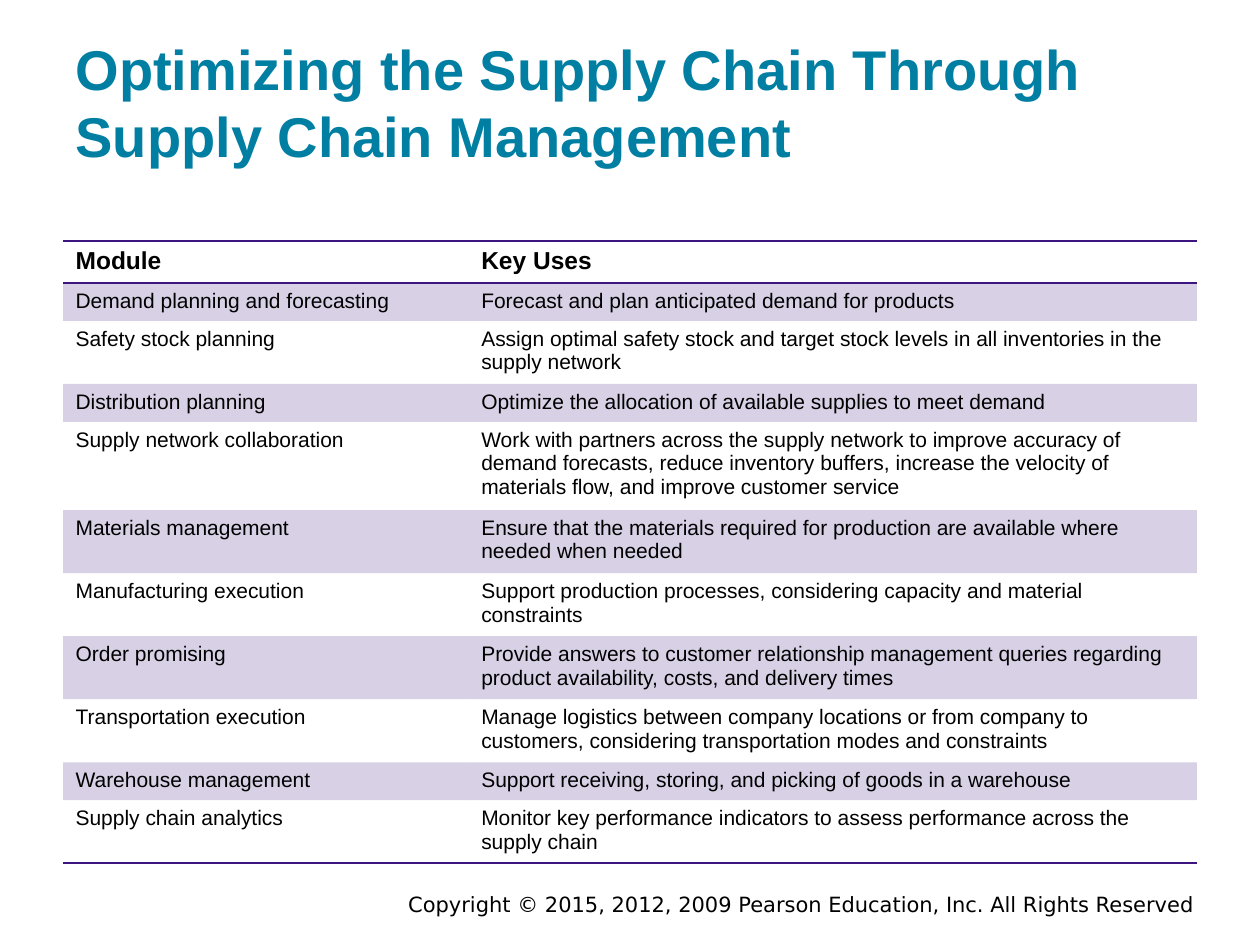
"""Build a slide that lists supply chain management modules and their key uses."""
from typing import NamedTuple

import pptx
import pptx.dml.color
import pptx.enum.text
import pptx.oxml
import pptx.oxml.ns
import pptx.util

TEAL = pptx.dml.color.RGBColor(0x00, 0x7F, 0xA3)
PURPLE = pptx.dml.color.RGBColor(0x3C, 0x15, 0x81)
BLACK = pptx.dml.color.RGBColor(0, 0, 0)
NAMESPACE = pptx.oxml.ns.nsdecls("a")
PLAIN_TABLE_STYLE = "{2D5ABB26-0587-4C30-8999-92F81FD0307C}"
SLIDE_WIDTH, SLIDE_HEIGHT = 10, 7.5
MARGIN = 0.05
COLUMN_SHARES = (0.322, 0.578)
HEADER_HEIGHT, LINE_HEIGHT, ROW_PADDING = 0.32, 0.19, 0.09


class Module(NamedTuple):
    """A table row, with the number of lines its text fills."""

    name: str
    key_uses: str
    lines: int


MODULES = (
    Module("Demand planning and forecasting", "Forecast and plan anticipated demand for products", 1),
    Module("Safety stock planning", "Assign optimal safety stock and target stock levels in all "
           "inventories in the supply network", 2),
    Module("Distribution planning", "Optimize the allocation of available supplies to meet demand", 1),
    Module("Supply network collaboration", "Work with partners across the supply network to improve "
           "accuracy of demand forecasts, reduce inventory buffers, increase the velocity of "
           "materials flow, and improve customer service", 3),
    Module("Materials management", "Ensure that the materials required for production are available "
           "where needed when needed", 2),
    Module("Manufacturing execution", "Support production processes, considering capacity and "
           "material constraints", 2),
    Module("Order promising", "Provide answers to customer relationship management queries regarding "
           "product availability, costs, and delivery times", 2),
    Module("Transportation execution", "Manage logistics between company locations or from company to "
           "customers, considering transportation modes and constraints", 2),
    Module("Warehouse management", "Support receiving, storing, and picking of goods in a warehouse", 1),
    Module("Supply chain analytics", "Monitor key performance indicators to assess performance across "
           "the supply chain", 2),
)


def across(share: float) -> int:
    """Turn a share of the slide width into a length."""
    return pptx.util.Inches(SLIDE_WIDTH * share)


def down(share: float) -> int:
    """Turn a share of the slide height into a length."""
    return pptx.util.Inches(SLIDE_HEIGHT * share)


def place(shape, left: float, top: float, width: float, height: float) -> None:
    """Place a shape by shares of the slide."""
    shape.left, shape.top = across(left), down(top)
    shape.width, shape.height = across(width), down(height)


def write(frame, text: str, size: float, color=BLACK, bold: bool = False, font: str = "Arial") -> None:
    """Set the text of a frame and format its only run."""
    frame.text = text
    span = frame.paragraphs[0].runs[0]
    span.font.name, span.font.size, span.font.bold = font, pptx.util.Pt(size), bold
    span.font.color.rgb = color


def add_rule(cell, side: str) -> None:
    """Draw a one-point purple border on the T or B side of a cell."""
    border = pptx.oxml.parse_xml(
        f'<a:ln{side} {NAMESPACE} w="12700"><a:solidFill><a:srgbClr val="{PURPLE}"/></a:solidFill></a:ln{side}>')
    properties = cell._tc.get_or_add_tcPr()
    borders = properties.findall(pptx.oxml.ns.qn("a:lnT"))
    properties.insert(len(borders), border)


def tint(cell) -> None:
    """Fill a cell with purple at twenty percent opacity."""
    cell.fill.solid()
    cell.fill.fore_color.rgb = PURPLE
    color = cell._tc.tcPr.find(".//" + pptx.oxml.ns.qn("a:srgbClr"))
    color.append(pptx.oxml.parse_xml(f'<a:alpha {NAMESPACE} val="20000"/>'))


def add_title(slide) -> None:
    """Format the title placeholder."""
    title = slide.shapes.title
    place(title, MARGIN, 0.032, 0.9, 0.16)
    frame = title.text_frame
    write(frame, "Optimizing the Supply Chain Through Supply Chain Management", 32, TEAL, True)
    frame.word_wrap = True
    frame.auto_size = pptx.enum.text.MSO_AUTO_SIZE.NONE
    frame.vertical_anchor = pptx.enum.text.MSO_ANCHOR.BOTTOM
    frame.margin_left = frame.margin_right = pptx.util.Inches(0.1)
    frame.margin_top = frame.margin_bottom = pptx.util.Inches(0.1)
    frame.paragraphs[0].alignment = pptx.enum.text.PP_ALIGN.LEFT


def add_module_table(slide) -> None:
    """Add the table of modules with tinted alternate rows."""
    heights = [HEADER_HEIGHT] + [ROW_PADDING + LINE_HEIGHT * module.lines for module in MODULES]
    table = slide.shapes.add_table(
        len(heights), len(COLUMN_SHARES), across(MARGIN), down(0.255),
        across(sum(COLUMN_SHARES)), pptx.util.Inches(sum(heights))).table
    table.horz_banding = False
    table._tbl.tblPr.find(pptx.oxml.ns.qn("a:tableStyleId")).text = PLAIN_TABLE_STYLE
    for column, share in zip(table.columns, COLUMN_SHARES):
        column.width = across(share)
    for row, height in zip(table.rows, heights):
        row.height = pptx.util.Inches(height)
    for cell, text in zip(table.rows[0].cells, ("Module", "Key Uses")):
        write(cell.text_frame, text, 14, bold=True)
        cell.fill.background()
        add_rule(cell, "T")
        add_rule(cell, "B")
    for number, module in enumerate(MODULES, start=1):
        for cell, text in zip(table.rows[number].cells, (module.name, module.key_uses)):
            write(cell.text_frame, text, 12)
            if number % 2:
                tint(cell)
            else:
                cell.fill.background()
            if number == len(MODULES):
                add_rule(cell, "B")


def add_copyright(slide) -> None:
    """Add the right-aligned copyright line."""
    box = slide.shapes.add_textbox(0, 0, 0, 0)
    place(box, 0.175, 0.937, 0.783, 0.03)
    write(box.text_frame, "Copyright © 2015, 2012, 2009 Pearson Education, Inc. All Rights Reserved",
          12, font="DejaVu Sans")
    box.text_frame.word_wrap = True
    box.text_frame.paragraphs[0].alignment = pptx.enum.text.PP_ALIGN.RIGHT


def main() -> None:
    """Build and save the deck."""
    deck = pptx.Presentation()
    deck.slide_width, deck.slide_height = across(1), down(1)
    page = deck.slides.add_slide(deck.slide_layouts[5])
    add_copyright(page)
    add_title(page)
    add_module_table(page)
    deck.save("out.pptx")


if __name__ == "__main__":
    main()
